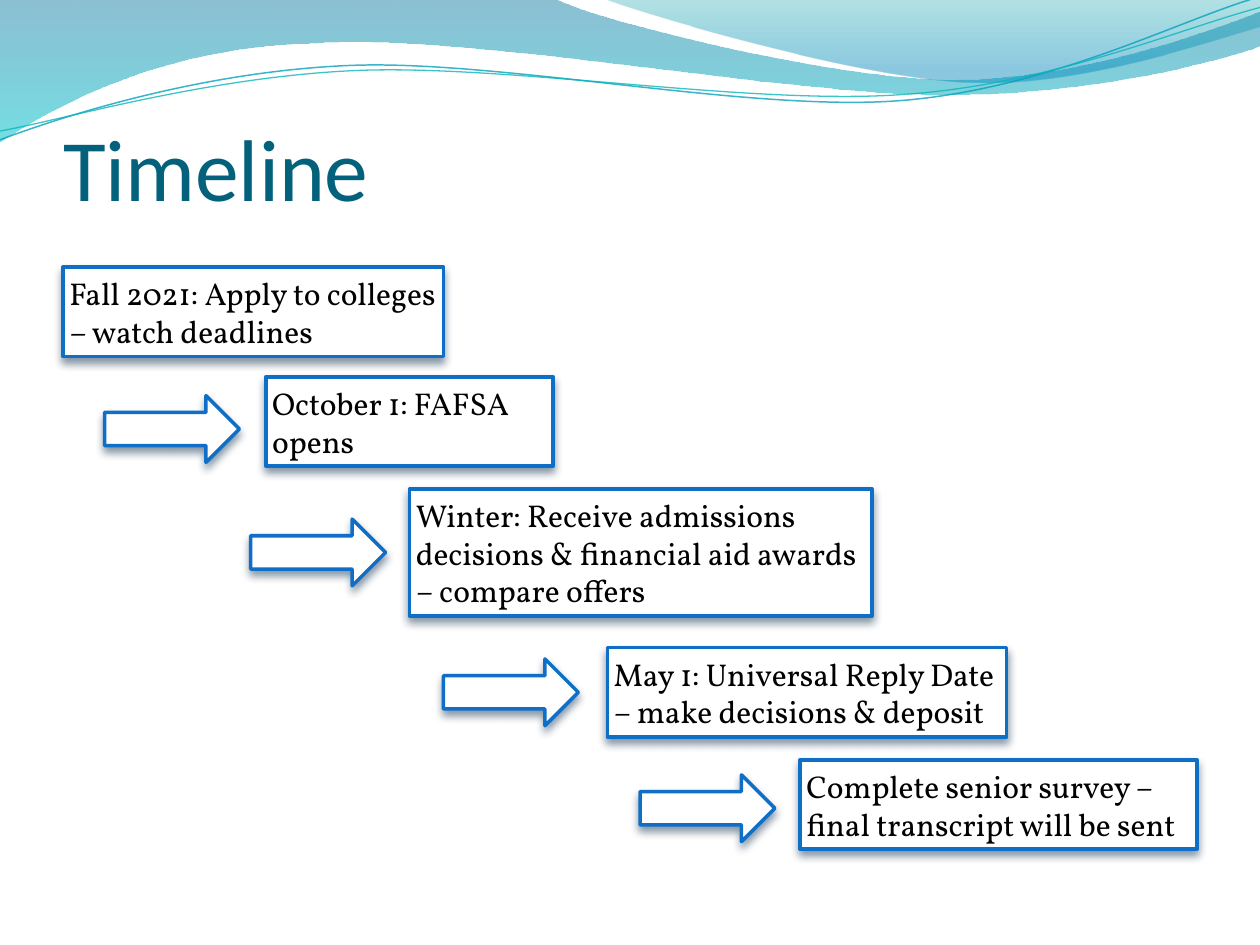
import math

from pptx import Presentation
from pptx import util as u
from pptx.dml.color import RGBColor
from pptx.enum import shapes, text
from pptx.oxml import parse_xml
from pptx.oxml.ns import nsdecls, qn

COLORS = {
    "title": "04617B", "text": "000000", "box": "FFFFFF", "border": "0F6FC6",
    "shadow": "032544", "wave_top": "00739E", "wave_end": "00C5CE",
    "crest_top": "009FA6", "crest_end": "008ABE",
    "upper_line": "05A0BE", "lower_line": "08B6BA",
}
FONT = "Vollkorn"
LINE_ROTATION = 357.3

WAVE = [[(0, 0)], [(4.4, -0.01)],
        [(4.76, 0.17), (6.64, 0.63), (7.58, 0.63)],
        [(8.53, 0.63), (9.58, 0.26), (10, 0.09)], [(10.01, 0.36)],
        [(9.83, 0.44), (8.7, 0.76), (7.46, 0.75)],
        [(6.22, 0.75), (3.82, 0.28), (2.57, 0.34)],
        [(1.29, 0.36), (0.46, 0.83), (-0.01, 1.13)], [(0, 0)]]
CREST = [[(4.79, -0.01)],
         [(5.09, 0.11), (6.82, 0.62), (7.69, 0.65)],
         [(8.56, 0.69), (9.61, 0.32), (10, 0.21)], [(10, 0)], [(4.79, -0.01)]]
UPPER_LINE = [[(0, 1.11)],
              [(0.48, 0.93), (1.58, 0.57), (2.77, 0.52)],
              [(3.95, 0.47), (5.93, 0.89), (7.13, 0.8)],
              [(8.33, 0.71), (9.38, 0.15), (9.98, -0.02)]]
LOWER_LINE = [[(0, 1.04)],
              [(0.47, 0.96), (1.64, 0.61), (2.83, 0.56)],
              [(4.03, 0.51), (5.97, 0.84), (7.17, 0.75)],
              [(8.36, 0.67), (9.41, 0.21), (10, 0.06)]]

STEPS = [
    ("Fall 2021: Apply to colleges – watch deadlines", (0.5, 2.12, 3.02, 0.71)),
    ("October 1: FAFSA opens", (2.11, 2.99, 2.28, 0.71)),
    ("Winter: Receive admissions decisions & financial aid awards – compare offers",
     (3.25, 3.88, 3.67, 1.01)),
    ("May 1: Universal Reply Date – make decisions & deposit", (4.82, 5.14, 3.17, 0.71)),
    ("Complete senior survey – final transcript will be sent", (6.35, 6.03, 3.15, 0.71)),
]
ARROWS = [(0.83, 3.14), (1.99, 4.12), (3.52, 5.23), (5.08, 6.15)]
ARROW_SIZE = (1.07, 0.53)


def rgb(name):
    return RGBColor.from_string(COLORS[name])


def set_alpha(clr, percent):
    clr.append(parse_xml(f'<a:alpha {nsdecls("a")} val="{percent * 1000}"/>'))


def write_text(sp, content, size=18, font=FONT, color="text", inset=0.05,
               anchor=text.MSO_ANCHOR.MIDDLE, auto_size=text.MSO_AUTO_SIZE.NONE):
    tf = sp.text_frame
    tf.word_wrap = True
    tf.auto_size = auto_size
    tf.vertical_anchor = anchor
    tf.margin_left = tf.margin_right = u.Inches(inset)
    tf.margin_top = tf.margin_bottom = u.Inches(inset)
    p = tf.paragraphs[0]
    p.alignment = text.PP_ALIGN.LEFT
    r = p.add_run()
    r.text = content
    r.font.size = u.Pt(size)
    r.font.name = font
    r.font.color.rgb = rgb(color)


def rotate(outline, center, degrees):
    cx, cy = center
    cos, sin = math.cos(math.radians(degrees)), math.sin(math.radians(degrees))
    return [[(cx + (x - cx) * cos - (y - cy) * sin, cy + (x - cx) * sin + (y - cy) * cos)
             for x, y in segment] for segment in outline]


def add_outline(owner, outline, close):
    outline = [[(u.Inches(x), u.Inches(y)) for x, y in segment] for segment in outline]
    ends = [segment[-1] for segment in outline]
    builder = owner.shapes.build_freeform(*ends[0])
    builder.add_line_segments(ends[1:], close=close)
    sp = builder.convert_to_shape()
    left, top = builder.shape_offset_x, builder.shape_offset_y
    lines = list(sp._element.spPr.iter(qn("a:lnTo")))
    for line, segment in zip(lines, outline[1:]):
        if len(segment) == 3:
            pts = "".join(f'<a:pt x="{x - left}" y="{y - top}"/>' for x, y in segment)
            curve = parse_xml(f'<a:cubicBezTo {nsdecls("a")}>{pts}</a:cubicBezTo>')
            line.getparent().replace(line, curve)
    sp.shadow.inherit = False
    return sp


def add_wave(s, outline, stops):
    sp = add_outline(s, outline, True)
    sp.line.fill.background()
    sp.fill.gradient()
    sp.fill.gradient_angle = 270
    for stop, (position, color, _) in zip(sp.fill.gradient_stops, stops):
        stop.position = position
        stop.color.rgb = rgb(color)
    for clr, (_, _, opacity) in zip(sp._element.spPr.iter(qn("a:srgbClr")), stops):
        set_alpha(clr, opacity)


def add_wave_line(group, outline, center, color, width):
    sp = add_outline(group, rotate(outline, center, -LINE_ROTATION), False)
    sp.rotation = LINE_ROTATION
    sp.fill.background()
    sp.line.color.rgb = rgb(color)
    sp.line.width = u.Pt(width)
    set_alpha(next(sp._element.spPr.iter(qn("a:srgbClr"))), 78)


def add_raised_shape(s, kind, place):
    sp = s.shapes.add_shape(kind, *map(u.Inches, place))
    sp.fill.solid()
    sp.fill.fore_color.rgb = rgb("box")
    sp.line.color.rgb = rgb("border")
    sp.line.width = u.Pt(2)
    sp.shadow.inherit = False
    sp._element.spPr.find(qn("a:effectLst")).append(parse_xml(
        f'<a:outerShdw {nsdecls("a")} blurRad="{u.Pt(5)}" dist="{u.Pt(3)}" '
        f'dir="5400000" rotWithShape="0"><a:srgbClr val="{COLORS["shadow"]}">'
        '<a:alpha val="48000"/></a:srgbClr></a:outerShdw>'))
    return sp


def add_title(s, content):
    sp = s.shapes.title
    sp.left, sp.top, sp.width, sp.height = map(u.Inches, (0.5, 0.77, 9, 0.97))
    write_text(sp, content, size=50, font="Calibri", color="title", inset=0,
               anchor=text.MSO_ANCHOR.BOTTOM)
    s.shapes._spTree.append(sp._element)


def add_step(s, content, place):
    sp = add_raised_shape(s, shapes.MSO_SHAPE.RECTANGLE, place)
    write_text(sp, content, auto_size=text.MSO_AUTO_SIZE.SHAPE_TO_FIT_TEXT)


def main():
    prs = Presentation()
    prs.slide_width, prs.slide_height = u.Inches(10), u.Inches(7.5)
    s = prs.slides.add_slide(prs.slide_layouts[5])
    add_wave(s, WAVE, [(0, "wave_top", 45), (1, "wave_end", 55)])
    add_wave(s, CREST, [(0, "crest_top", 30), (0.8, "crest_end", 45)])
    group = s.shapes.add_group_shape()
    add_wave_line(group, UPPER_LINE, (4.99, 0.56), "upper_line", 0.85)
    add_wave_line(group, LOWER_LINE, (5, 0.58), "lower_line", 0.75)
    add_title(s, "Timeline")
    for content, place in STEPS:
        add_step(s, content, place)
    for corner in ARROWS:
        add_raised_shape(s, shapes.MSO_SHAPE.RIGHT_ARROW, corner + ARROW_SIZE)
    prs.save("out.pptx")


if __name__ == "__main__":
    main()
